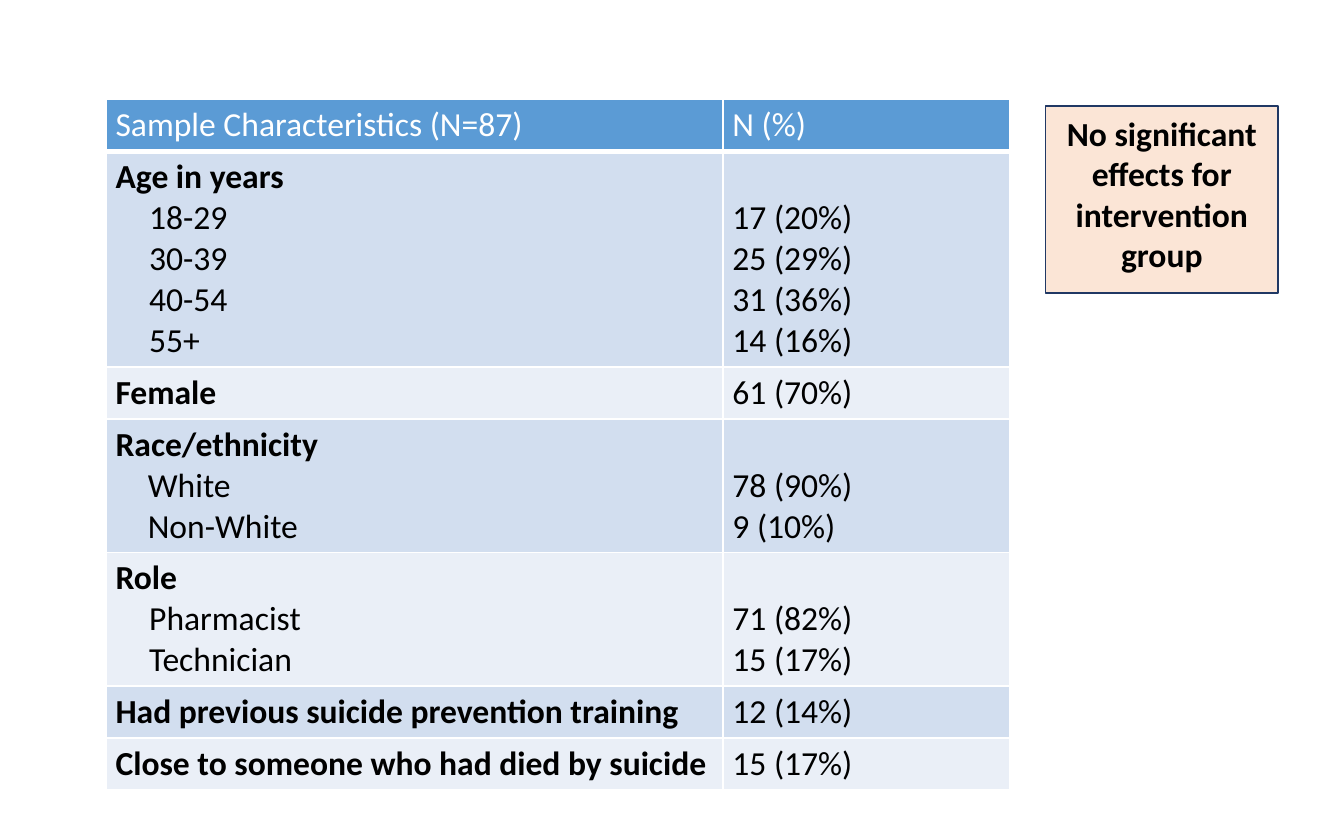
from dataclasses import dataclass

from pptx import Presentation
from pptx import util as u
from pptx.dml.color import RGBColor
from pptx.enum import shapes, text
from pptx.oxml import ns
from lxml import etree

PX = 9144


def px(length):
    return u.Emu(length * PX)


@dataclass(frozen=True)
class Theme:
    font: str = "Calibri"
    size: int = 18
    ink: str = "000000"
    white: str = "FFFFFF"
    header: str = "5B9BD5"
    bands: tuple = ("D2DEEF", "EAEFF7")
    note_fill: str = "FBE5D6"
    note_line: str = "203864"
    rule: int = 1
    header_rule: int = 3


class SlideBuilder:
    def __init__(self, slide, theme):
        self.slide = slide
        self.theme = theme

    def paint(self, item, color):
        item.fill.solid()
        item.fill.fore_color.rgb = RGBColor.from_string(color)

    def add_lines(self, frame, lines, color, align=text.PP_ALIGN.LEFT):
        for index, (words, bold, indent) in enumerate(lines):
            para = frame.add_paragraph() if index else frame.paragraphs[0]
            para.alignment = align
            if indent:
                properties = para._p.get_or_add_pPr()
                properties.set("marL", str(px(indent)))
                properties.set("indent", "0")
            span = para.add_run()
            span.text = words
            span.font.name = self.theme.font
            span.font.size = u.Pt(self.theme.size)
            span.font.bold = bold
            span.font.color.rgb = RGBColor.from_string(color)

    def border(self, cell, bottom):
        properties = cell._tc.get_or_add_tcPr()
        for side in "LRTB":
            width = bottom if side == "B" else self.theme.rule
            line = etree.SubElement(properties, ns.qn(f"a:ln{side}"), w=str(u.Pt(width)))
            fill = etree.SubElement(line, ns.qn("a:solidFill"))
            etree.SubElement(fill, ns.qn("a:srgbClr"), val=self.theme.white)

    def cell(self, cell, lines, fill, color, bottom):
        cell.margin_left = cell.margin_right = px(7)
        cell.margin_top = cell.margin_bottom = px(4)
        cell.vertical_anchor = text.MSO_ANCHOR.BOTTOM
        self.border(cell, bottom)
        self.paint(cell, fill)
        self.add_lines(cell.text_frame, lines, color)

    def table(self, left, top, widths, headings, groups):
        theme = self.theme
        heights = [38] + [38 + 30 * len(items) for _, _, _, items in groups]
        table = self.slide.shapes.add_table(
            len(heights), len(widths), px(left), px(top), px(sum(widths)), px(sum(heights))
        ).table
        table.first_row = table.horz_banding = False
        for column, width in zip(table.columns, widths):
            column.width = px(width)
        for row, height in zip(table.rows, heights):
            row.height = px(height)
        for column, heading in enumerate(headings):
            self.cell(table.cell(0, column), [(heading, False, 0)],
                      theme.header, theme.white, theme.header_rule)
        for row, (name, total, indent, items) in enumerate(groups, 1):
            labels = [(name, True, 0)] + [(label, False, indent) for label, _ in items]
            values = [(value, False, 0) for _, value in items] or [(total, False, 0)]
            fill = theme.bands[(row - 1) % 2]
            for column, lines in enumerate((labels, values)):
                self.cell(table.cell(row, column), lines, fill, theme.ink, theme.rule)

    def note(self, left, top, width, height, words):
        box = self.slide.shapes.add_shape(
            shapes.MSO_SHAPE.RECTANGLE, px(left), px(top), px(width), px(height)
        )
        box.shadow.inherit = False
        self.paint(box, self.theme.note_fill)
        box.line.color.rgb = RGBColor.from_string(self.theme.note_line)
        box.line.width = u.Pt(self.theme.rule)
        box.text_frame.word_wrap = True
        box.text_frame.vertical_anchor = text.MSO_ANCHOR.TOP
        self.add_lines(box.text_frame, [(words, True, 0)], self.theme.ink, text.PP_ALIGN.CENTER)


GROUPS = [
    ("Age in years", None, 25, [
        ("18-29", "17 (20%)"),
        ("30-39", "25 (29%)"),
        ("40-54", "31 (36%)"),
        ("55+", "14 (16%)"),
    ]),
    ("Female", "61 (70%)", 0, []),
    ("Race/ethnicity", None, 24, [("White", "78 (90%)"), ("Non-White", "9 (10%)")]),
    ("Role", None, 25, [("Pharmacist", "71 (82%)"), ("Technician", "15 (17%)")]),
    ("Had previous suicide prevention training", "12 (14%)", 0, []),
    ("Close to someone who had died by suicide", "15 (17%)", 0, []),
]


def main():
    deck = Presentation()
    deck.slide_width, deck.slide_height = px(1000), px(625)
    page = SlideBuilder(deck.slides.add_slide(deck.slide_layouts[6]), Theme())
    page.table(79, 74, (459, 213), ("Sample Characteristics (N=87)", "N (%)"), GROUPS)
    page.note(778, 79, 173, 139, "No significant effects for intervention group")
    deck.save("out.pptx")


if __name__ == "__main__":
    main()
